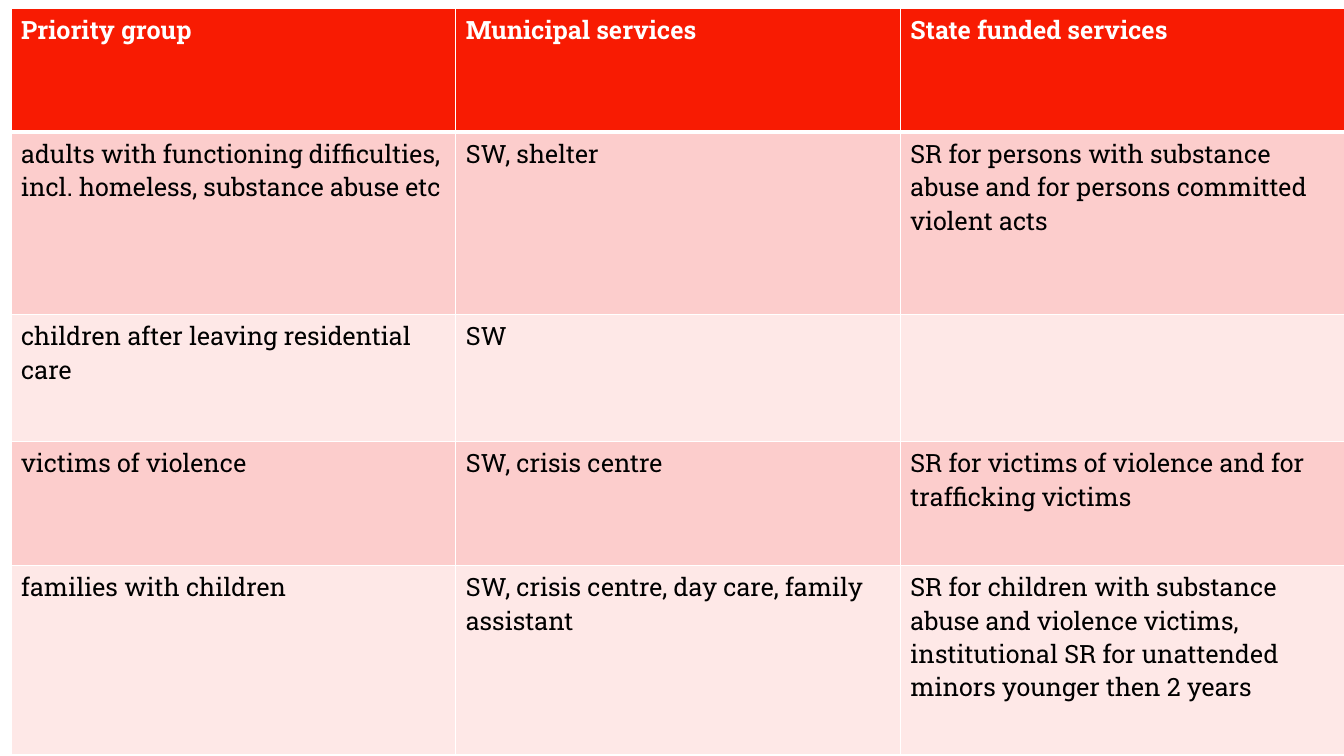
from lxml import etree
from pptx import Presentation
from pptx.dml.color import RGBColor
from pptx.oxml.ns import qn
from pptx.util import Inches, Pt

WHITE = RGBColor(0xFF, 0xFF, 0xFF)
BLACK = RGBColor(0x00, 0x00, 0x00)
RED = RGBColor(0xF8, 0x1B, 0x02)
ROSE = RGBColor(0xFC, 0xCD, 0xCC)
PALE_ROSE = RGBColor(0xFE, 0xE8, 0xE7)
FONT = "Roboto Slab"

COLUMN_WIDTH = 4.41
ROW_HEIGHTS = [1.23, 1.81, 1.26, 1.23, 1.88]
SERVICES = [
    ("Priority group", "Municipal services", "State funded services"),
    ("adults with functioning difficulties, incl. homeless, substance abuse etc",
     "SW, shelter",
     "SR for persons with substance abuse and for persons committed violent acts"),
    ("children after leaving residential care", "SW", ""),
    ("victims of violence", "SW, crisis centre",
     "SR for victims of violence and for trafficking victims"),
    ("families with children",
     "SW, crisis centre, day care, family assistant",
     "SR for children with substance abuse and violence victims, "
     "institutional SR for unattended minors younger then 2 years"),
]


def add_border(cell, side, points):
    properties = cell._tc.get_or_add_tcPr()
    line = etree.SubElement(properties, qn(f"a:{side}"), w=str(Pt(points)))
    fill = etree.SubElement(line, qn("a:solidFill"))
    etree.SubElement(fill, qn("a:srgbClr"), val=str(WHITE))


deck = Presentation()
deck.slide_width = Inches(13.33)
deck.slide_height = Inches(7.5)
page = deck.slides.add_slide(deck.slide_layouts[6])

table = page.shapes.add_table(
    len(SERVICES), 3, Inches(0.11), Inches(0.08),
    Inches(3 * COLUMN_WIDTH), Inches(sum(ROW_HEIGHTS))).table
for column in table.columns:
    column.width = Inches(COLUMN_WIDTH)

for row_index, texts in enumerate(SERVICES):
    table.rows[row_index].height = Inches(ROW_HEIGHTS[row_index])
    is_header = row_index == 0
    band = ROSE if row_index % 2 else PALE_ROSE
    for column_index, text in enumerate(texts):
        cell = table.cell(row_index, column_index)
        add_border(cell, "lnL", 1)
        add_border(cell, "lnR", 1)
        add_border(cell, "lnT", 3 if row_index == 1 else 1)
        add_border(cell, "lnB", 3 if is_header else 1)
        cell.fill.solid()
        cell.fill.fore_color.rgb = RED if is_header else band
        cell.text = text
        para = cell.text_frame.paragraphs[0]
        para.font.name = FONT
        para.font.size = Pt(18)
        para.font.bold = is_header
        para.font.color.rgb = WHITE if is_header else BLACK

deck.save("out.pptx")
